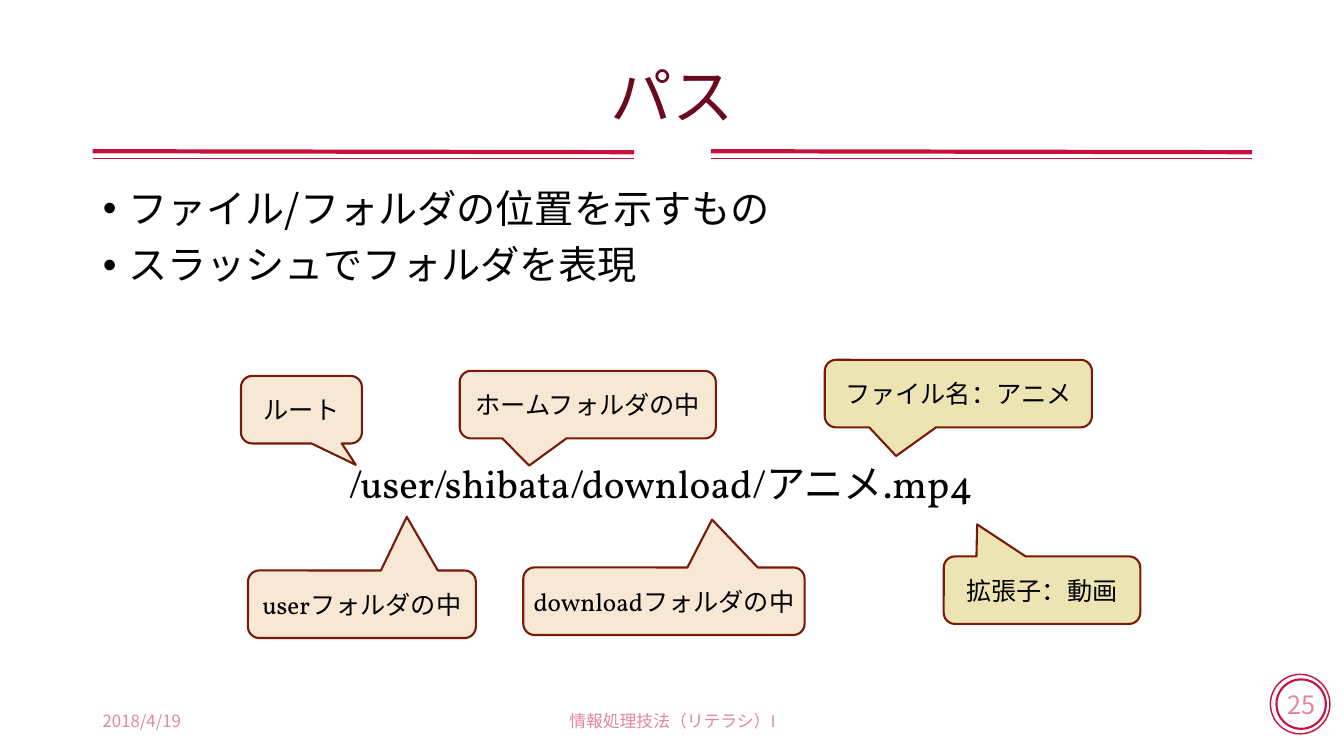
from dataclasses import dataclass

from lxml.etree import SubElement
from pptx import Presentation
from pptx.dml.color import RGBColor
from pptx.enum.shapes import MSO_CONNECTOR as CONN, MSO_SHAPE as SHAPE
from pptx.enum.text import MSO_ANCHOR as ANCHOR, MSO_AUTO_SIZE as FIT, PP_ALIGN as ALIGN
from pptx.oxml.ns import qn
from pptx.util import Inches, Pt

SANS, SERIF = "Noto Sans CJK JP", "Vollkorn"
CRIMSON, WINE, RUST, BLACK = "C8103D", "6B0920", "781A07", "000000"
PEACH, KHAKI = "F7E7D5", "ECE5B3"


@dataclass
class Callout:
    text: str
    left: float
    top: float
    width: float
    tip_x: float
    tip_y: float
    fill: str = PEACH


@dataclass
class Ring:
    left: float
    top: float
    size: float
    weight: float


@dataclass
class Rule:
    top: float
    drop: float
    weight: float


@dataclass
class Label:
    text: str
    left: float
    width: float
    align: ALIGN


CALLOUTS = [
    Callout("userフォルダの中", 2.46, 5.66, 2.26, 0.197, -1.294),
    Callout("ホームフォルダの中", 4.56, 3.68, 2.54, -0.229, 0.902),
    Callout("downloadフォルダの中", 5.19, 5.63, 2.79, 0.171, -1.209),
    Callout("ファイル名：アニメ", 8.18, 3.57, 2.65, -0.233, 0.924, KHAKI),
    Callout("拡張子：動画", 9.36, 5.52, 1.95, -0.33, -0.974, KHAKI),
    Callout("ルート", 2.39, 3.73, 1.2, 0.45, 0.817),
]
RINGS = [Ring(12.6, 6.69, 0.59, 1), Ring(12.66, 6.74, 0.49, 1.5)]
RULES = [Rule(1.5, 0.01, 3), Rule(1.57, 0, 1)]
RULE_LEFTS, RULE_WIDTH = (0.92, 7.05), 5.37
FOOTERS = [
    Label("2018/4/19", 0.92, 3, ALIGN.LEFT),
    Label("情報処理技法（リテラシ）I", 4.42, 4.5, ALIGN.CENTER),
]
POINTS = ["ファイル/フォルダの位置を示すもの", "スラッシュでフォルダを表現"]


def rgb(value: str) -> RGBColor:
    return RGBColor.from_string(value)


def style(p, size: float, color: str, font: str = SANS,
          align: ALIGN = ALIGN.LEFT, alpha: int = 100) -> None:
    p.alignment = align
    for r in p.runs:
        r.font.size, r.font.name = Pt(size), font
        r.font.color.rgb = rgb(color)
        rPr = r._r.get_or_add_rPr()
        SubElement(rPr, qn("a:ea"), typeface=SANS)
        if alpha < 100:
            clr = rPr.find(qn("a:solidFill")).find(qn("a:srgbClr"))
            SubElement(clr, qn("a:alpha"), val=str(alpha * 1000))


def move(sp, left: float, top: float, width: float, height: float) -> None:
    sp.left, sp.top = Inches(left), Inches(top)
    sp.width, sp.height = Inches(width), Inches(height)


def add_outlined(s, kind: SHAPE, left: float, top: float, width: float,
                 height: float, line: str, weight: float, fill: str = ""):
    sp = s.shapes.add_shape(kind, Inches(left), Inches(top), Inches(width), Inches(height))
    sp.shadow.inherit = False
    sp.line.color.rgb, sp.line.width = rgb(line), Pt(weight)
    if fill:
        sp.fill.solid()
        sp.fill.fore_color.rgb = rgb(fill)
    else:
        sp.fill.background()
    sp.text_frame.word_wrap = False
    sp.text_frame.vertical_anchor = ANCHOR.MIDDLE
    return sp


def add_rule(s, left: float, rule: Rule) -> None:
    line = s.shapes.add_connector(CONN.STRAIGHT, Inches(left), Inches(rule.top),
                                  Inches(left + RULE_WIDTH), Inches(rule.top + rule.drop))
    line.line.color.rgb, line.line.width = rgb(CRIMSON), Pt(rule.weight)
    SubElement(line._element.spPr, qn("a:effectLst"))


def add_text(s, text: str, left: float, top: float, width: float, height: float):
    tf = s.shapes.add_textbox(Inches(left), Inches(top), Inches(width), Inches(height)).text_frame
    tf.word_wrap = True
    tf.text = text
    return tf


def add_callout(s, c: Callout) -> None:
    sp = add_outlined(s, SHAPE.ROUNDED_RECTANGULAR_CALLOUT, c.left, c.top,
                      c.width, 0.67, RUST, 1.5, c.fill)
    sp.adjustments[0], sp.adjustments[1] = c.tip_x, c.tip_y
    sp.text_frame.text = c.text
    style(sp.text_frame.paragraphs[0], 18, BLACK, SERIF, ALIGN.CENTER)


def fill_title(sp) -> None:
    move(sp, 0.92, 0.4, 11.5, 1.17)
    tf = sp.text_frame
    tf.text = "パス"
    tf.auto_size, tf.vertical_anchor = FIT.NONE, ANCHOR.MIDDLE
    tf.paragraphs[0].line_spacing = 0.9
    style(tf.paragraphs[0], 44, WINE, align=ALIGN.CENTER)


def fill_body(sp) -> None:
    move(sp, 0.92, 1.83, 11.5, 4.93)
    tf = sp.text_frame
    tf.text = "\n".join(POINTS)
    tf.auto_size, tf.vertical_anchor = FIT.NONE, ANCHOR.TOP
    for i, p in enumerate(tf.paragraphs):
        pPr = p._p.get_or_add_pPr()
        pPr.set("marL", str(Inches(0.25)))
        pPr.set("indent", str(Inches(-0.25)))
        SubElement(pPr, qn("a:buFont"), typeface="Arial")
        SubElement(pPr, qn("a:buChar"), char="•")
        p.line_spacing = 0.9
        p.space_before = Pt(10 if i else 0)
        style(p, 28, BLACK)


def main() -> None:
    prs = Presentation()
    prs.slide_width, prs.slide_height = Inches(13.33), Inches(7.5)
    s = prs.slides.add_slide(prs.slide_layouts[1])
    fill_title(s.shapes.title)
    fill_body(s.placeholders[1])

    for ring in RINGS:
        sp = add_outlined(s, SHAPE.OVAL, ring.left, ring.top, ring.size, ring.size,
                          CRIMSON, ring.weight)
    sp.text_frame.text = "25"
    style(sp.text_frame.paragraphs[0], 18, CRIMSON, align=ALIGN.CENTER, alpha=50)

    for left in RULE_LEFTS:
        for rule in RULES:
            add_rule(s, left, rule)

    for label in FOOTERS:
        tf = add_text(s, label.text, label.left, 6.95, label.width, 0.4)
        tf.vertical_anchor = ANCHOR.MIDDLE
        style(tf.paragraphs[0], 12, CRIMSON, align=label.align, alpha=50)

    tf = add_text(s, "/user/shibata/download/アニメ.mp4", 3.36, 4.51, 6.93, 0.57)
    style(tf.paragraphs[0], 28, BLACK, SERIF)
    for callout in CALLOUTS:
        add_callout(s, callout)
    prs.save("out.pptx")


if __name__ == "__main__":
    main()
